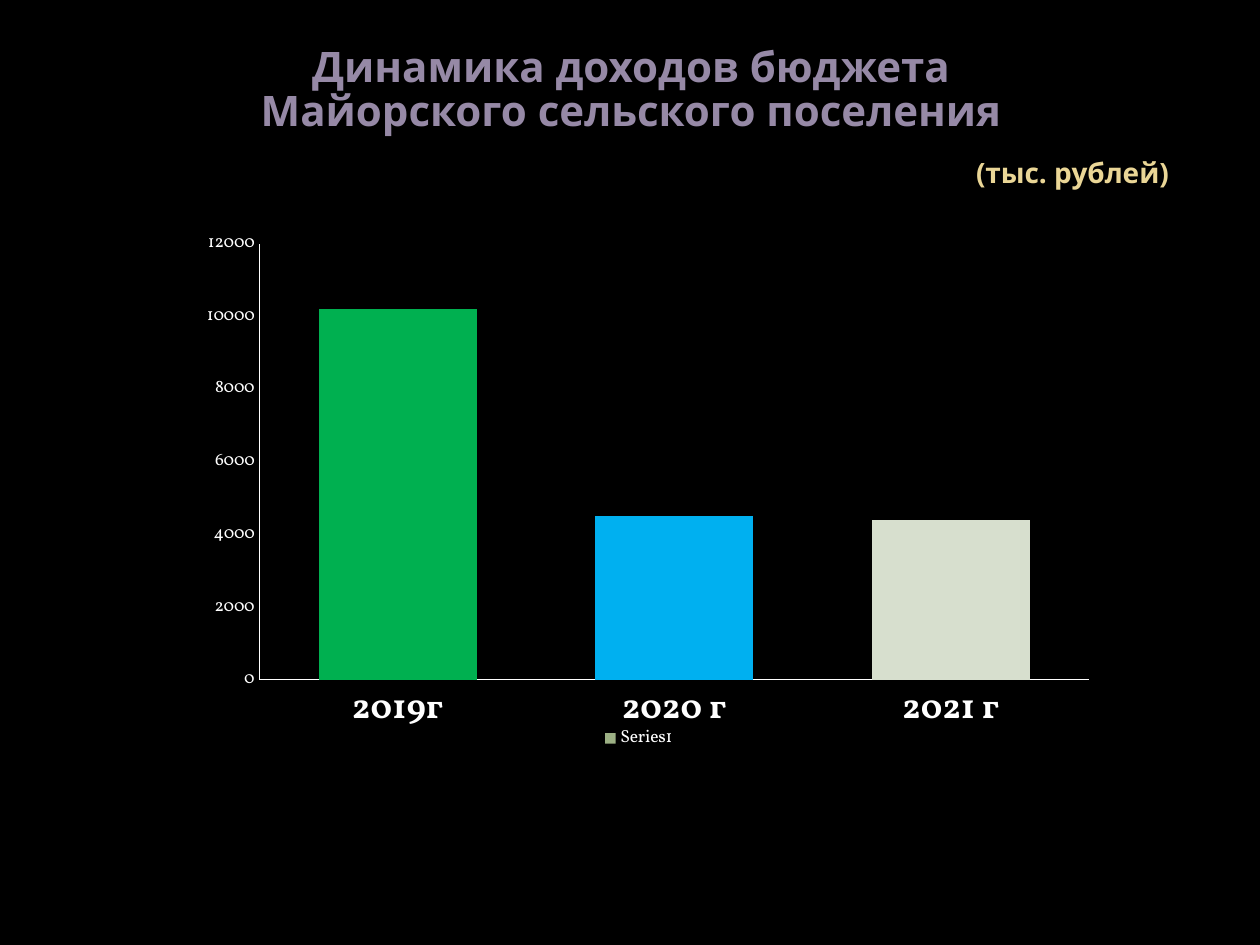
from lxml import etree
from pptx import Presentation
from pptx.chart.data import CategoryChartData
from pptx.dml.color import RGBColor
from pptx.enum.chart import XL_CHART_TYPE, XL_LEGEND_POSITION, XL_TICK_MARK
from pptx.enum.text import PP_ALIGN
from pptx.oxml.ns import qn
from pptx.util import Emu, Pt

PX = 914400 // 126
BLACK = RGBColor(0x00, 0x00, 0x00)
WHITE = RGBColor(0xFF, 0xFF, 0xFF)
PURPLE = RGBColor(0x96, 0x89, 0xA6)
GOLD = RGBColor(0xEA, 0xD6, 0x96)
GREEN = RGBColor(0x00, 0xB0, 0x50)
BLUE = RGBColor(0x00, 0xB0, 0xF0)
PALE = RGBColor(0xD7, 0xDF, 0xCE)
SAGE = RGBColor(0x9C, 0xB0, 0x84)
CENTER, RIGHT = PP_ALIGN.CENTER, PP_ALIGN.RIGHT
COLUMN = XL_CHART_TYPE.COLUMN_CLUSTERED
BOTTOM = XL_LEGEND_POSITION.BOTTOM
NO_TICK = XL_TICK_MARK.NONE


class Deck:
    text_font = "Open Sans"
    chart_font = "Vollkorn"

    def __init__(self):
        self.prs = Presentation()
        self.prs.slide_width = Emu(1260 * PX)
        self.prs.slide_height = Emu(945 * PX)

    def add_slide(self, color):
        self.s = self.prs.slides.add_slide(self.prs.slide_layouts[6])
        fill = self.s.background.fill
        fill.solid()
        fill.fore_color.rgb = color

    def text(self, box, lines, size, color, align, spacing=1.0):
        tf = self.s.shapes.add_textbox(*(Emu(v * PX) for v in box)).text_frame
        tf.word_wrap = True
        tf.margin_left = tf.margin_right = tf.margin_top = tf.margin_bottom = 0
        tf.text = "\n".join(lines)
        for p in tf.paragraphs:
            p.alignment = align
            p.line_spacing = spacing
            for r in p.runs:
                r.font.name = self.text_font
                r.font.size = Pt(size)
                r.font.bold = True
                r.font.color.rgb = color

    def set_layout(self, element, before, **values):
        for old in element.findall(qn("c:layout")):
            element.remove(old)
        layout = etree.Element(qn("c:layout"))
        manual = etree.SubElement(layout, qn("c:manualLayout"))
        for tag, value in values.items():
            etree.SubElement(manual, qn(f"c:{tag}")).set("val", str(value))
        element.find(qn(before)).addprevious(layout)

    def column_chart(self, box, name, cats, vals, colors, series_color):
        data = CategoryChartData()
        data.categories = cats
        data.add_series(name, vals)
        frame = self.s.shapes.add_chart(COLUMN, *(Emu(v * PX) for v in box), data)
        chart = frame.chart
        chart.has_title = False
        chart.font.name = self.chart_font
        chart.font.size = Pt(10)
        chart.font.color.rgb = WHITE
        chart.has_legend = True
        chart.legend.position = BOTTOM
        chart.legend.include_in_layout = False

        plot = chart.plots[0]
        plot.gap_width = 75
        plot.vary_by_categories = False
        series = plot.series[0]
        for part, color in [(series, series_color)] + [
            (series.points[i], c) for i, c in enumerate(colors)
        ]:
            part.format.fill.solid()
            part.format.fill.fore_color.rgb = color

        for axis in (chart.category_axis, chart.value_axis):
            axis.has_major_gridlines = False
            axis.major_tick_mark = axis.minor_tick_mark = NO_TICK
            axis.format.line.color.rgb = WHITE
            axis.format.line.width = Pt(0.75)
        chart.value_axis.minimum_scale = 0
        chart.value_axis.maximum_scale = 12000
        chart.value_axis.major_unit = 2000
        font = chart.category_axis.tick_labels.font
        font.size = Pt(20)
        font.bold = True
        font.name = self.chart_font
        font.color.rgb = WHITE

        area = plot._element.getparent()
        self.set_layout(area, "c:barChart", layoutTarget="inner", xMode="edge",
                        yMode="edge", x=0.07, y=0.03, w=0.93, h=0.78)
        self.set_layout(chart.legend._element, "c:overlay", xMode="edge",
                        yMode="edge", x=0.45, y=0.89, w=0.09, h=0.05)


def main():
    deck = Deck()
    deck.add_slide(BLACK)
    deck.text((64, 47, 1134, 104),
              ["Динамика доходов бюджета", "Майорского сельского поселения"],
              24, PURPLE, CENTER, 0.88)
    deck.text((869, 156, 300, 38), ["(тыс. рублей)"], 16, GOLD, RIGHT)
    deck.column_chart((197, 227, 893, 559), "Series1",
                      ["2019г", "2020 г", "2021 г"], [10200, 4500, 4400],
                      [GREEN, BLUE, PALE], SAGE)
    deck.prs.save("out.pptx")


if __name__ == "__main__":
    main()
